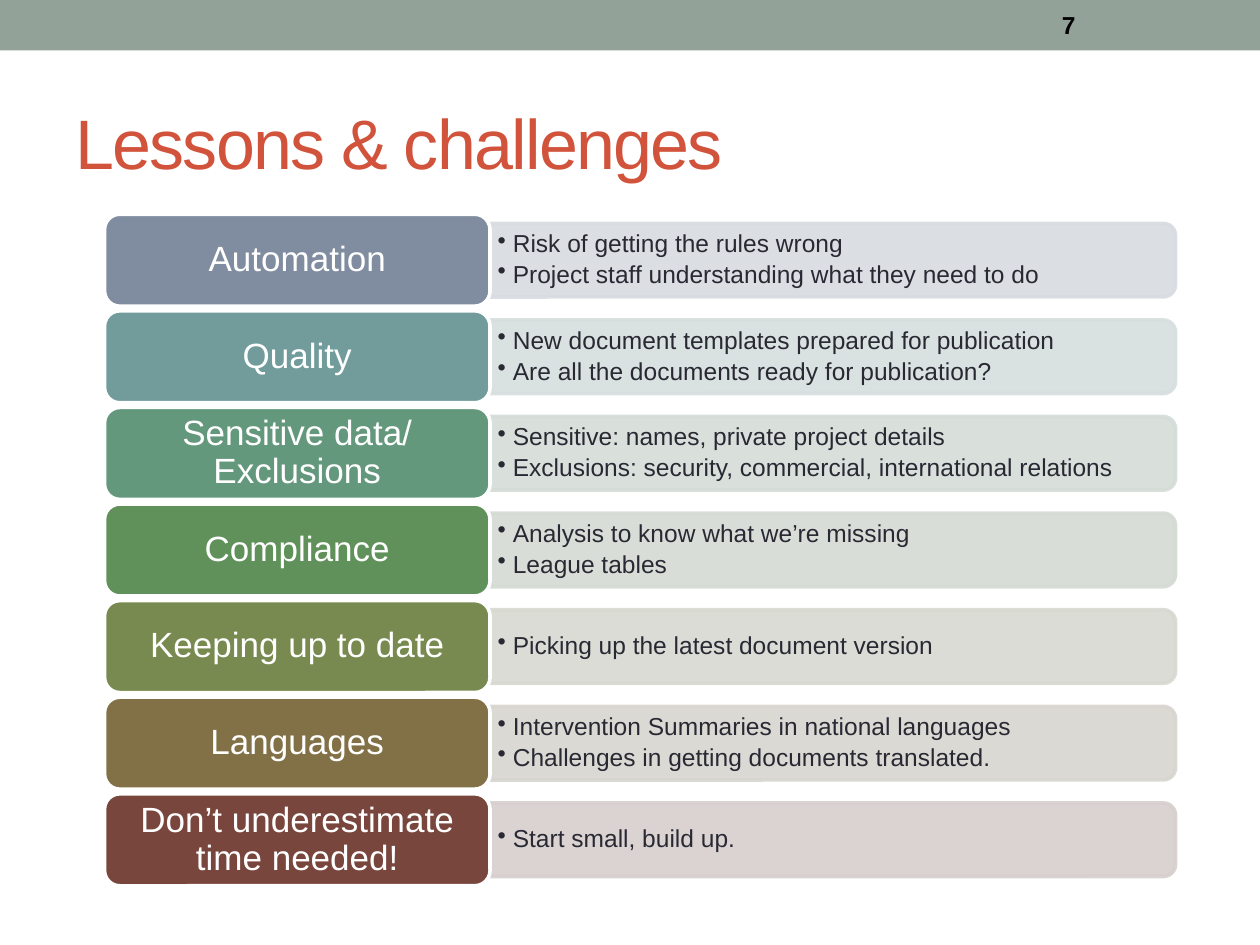
from lxml.etree import SubElement
from pptx import Presentation
from pptx.dml.color import RGBColor
from pptx.enum.shapes import MSO_SHAPE
from pptx.enum.text import MSO_ANCHOR, PP_ALIGN
from pptx.oxml.ns import qn
from pptx.util import Inches, Pt

WHITE = RGBColor(0xFF, 0xFF, 0xFF)
BLACK = RGBColor(0x00, 0x00, 0x00)
INK = RGBColor(0x29, 0x29, 0x34)
RUST = RGBColor(0xD2, 0x53, 0x3C)
SAGE = RGBColor(0x93, 0xA2, 0x99)

# label, tab colour, band colour, points
ROWS = [
    ("Automation", RGBColor(0x80, 0x8D, 0xA0), RGBColor(0xD8, 0xDB, 0xDF),
     ["Risk of getting the rules wrong",
      "Project staff understanding what they need to do"]),
    ("Quality", RGBColor(0x72, 0x9B, 0x9C), RGBColor(0xD6, 0xDE, 0xDE),
     ["New document templates prepared for publication",
      "Are all the documents ready for publication?"]),
    ("Sensitive data/ Exclusions", RGBColor(0x64, 0x98, 0x7C), RGBColor(0xD5, 0xDC, 0xD8),
     ["Sensitive: names, private project details",
      "Exclusions: security, commercial, international relations"]),
    ("Compliance", RGBColor(0x61, 0x91, 0x5A), RGBColor(0xD4, 0xDB, 0xD3),
     ["Analysis to know what we’re missing", "League tables"]),
    ("Keeping up to date", RGBColor(0x78, 0x8A, 0x50), RGBColor(0xD7, 0xD9, 0xD1),
     ["Picking up the latest document version"]),
    ("Languages", RGBColor(0x82, 0x71, 0x46), RGBColor(0xD8, 0xD5, 0xD0),
     ["Intervention Summaries in national languages",
      "Challenges in getting documents translated."]),
    ("Don’t underestimate time needed!", RGBColor(0x79, 0x46, 0x3D), RGBColor(0xD7, 0xCF, 0xCE),
     ["Start small, build up."]),
]


def add_box(slide, kind, box, fill, line=None):
    shape = slide.shapes.add_shape(kind, *map(Inches, box))
    shape.shadow.inherit = False
    shape.fill.solid()
    shape.fill.fore_color.rgb = fill
    if line is None:
        shape.line.fill.background()
    else:
        shape.line.color.rgb = line
        shape.line.width = Pt(2.08)
    return shape


def write(shape, lines, size, color, pad=(0.1, 0.05), bold=False, **style):
    """Fill the shape with one paragraph a line; style holds paragraph attributes."""
    frame = shape.text_frame
    side, edge = map(Inches, pad)
    layout = dict(word_wrap=True, vertical_anchor=MSO_ANCHOR.MIDDLE,
                  margin_left=side, margin_right=side,
                  margin_top=edge, margin_bottom=edge)
    for name, value in layout.items():
        setattr(frame, name, value)
    look = dict(name="Arial", size=Pt(size), bold=bold)
    for i, line in enumerate(lines):
        para = frame.paragraphs[0] if i == 0 else frame.add_paragraph()
        for name, value in style.items():
            setattr(para, name, value)
        run = para.add_run()
        run.text = line
        for name, value in look.items():
            setattr(run.font, name, value)
        run.font.color.rgb = color
    return frame.paragraphs


def add_text(slide, box, *args, **style):
    return write(slide.shapes.add_textbox(*map(Inches, box)), *args, **style)


def add_head(slide, box):
    left, top, width, height = box
    add_box(slide, MSO_SHAPE.RECTANGLE, box, SAGE)
    add_text(slide, (left + 8.33, top + 0.02, 1.17, height - 0.04), ["7"], 14, BLACK, bold=True)


def add_title(slide, box):
    para, = add_text(slide, box, ["Lessons & challenges"], 40, RUST)
    para.runs[0].font._element.set("spc", "-100")


def add_band(slide, box, color):
    """Rectangle rounded on its right side only: a top-rounded one turned by 90 degrees."""
    left, top, width, height = box
    mid_x, mid_y = left + width / 2, top + height / 2
    band = add_box(slide, MSO_SHAPE.ROUND_2_SAME_RECTANGLE,
                   (mid_x - height / 2, mid_y - width / 2, height, width), color, color)
    band.rotation = 90
    for tint in band._element.spPr.iter(qn("a:srgbClr")):
        SubElement(tint, qn("a:alpha"), val="90000")


def add_row(slide, box, label, dark, pale, points):
    left, top, width, height = box
    tab = 3.06
    inset = height * 0.1
    add_band(slide, (left + tab, top + inset, width - tab, height - 2 * inset), pale)
    paras = add_text(slide, (left + tab, top + 0.1, width - tab - 0.03, height - 0.2),
                     points, 14, INK, pad=(0.06, 0.03),
                     level=1, line_spacing=0.9, space_after=Pt(2.5))
    for para in paras:
        props = para._p.get_or_add_pPr()
        props.set("marL", str(Inches(0.12)))
        props.set("indent", str(-Inches(0.12)))
        SubElement(props, qn("a:buChar"), char="•")
    shape = add_box(slide, MSO_SHAPE.ROUNDED_RECTANGLE, (left, top, tab, height), dark, WHITE)
    write(shape, [label], 20, WHITE, pad=(0.08, 0.04),
          alignment=PP_ALIGN.CENTER, line_spacing=0.9)


def add_list(slide, box):
    """Stack the rows, with gaps of 5% of a row's height."""
    left, top, width, height = box
    count = len(ROWS)
    tall = height / (count + 0.05 * (count - 1))
    for i, row in enumerate(ROWS):
        add_row(slide, (left, top + i * tall * 1.05, width, tall), *row)


def main():
    deck = Presentation()
    deck.slide_width, deck.slide_height = Inches(10), Inches(7.5)
    slide = deck.slides.add_slide(deck.slide_layouts[6])
    add_head(slide, (0, 0, 10, 0.4))
    add_title(slide, (0.5, 0.58, 9, 1.08))
    add_list(slide, (0.83, 1.7, 8.5, 5.33))
    deck.save("out.pptx")


if __name__ == "__main__":
    main()
